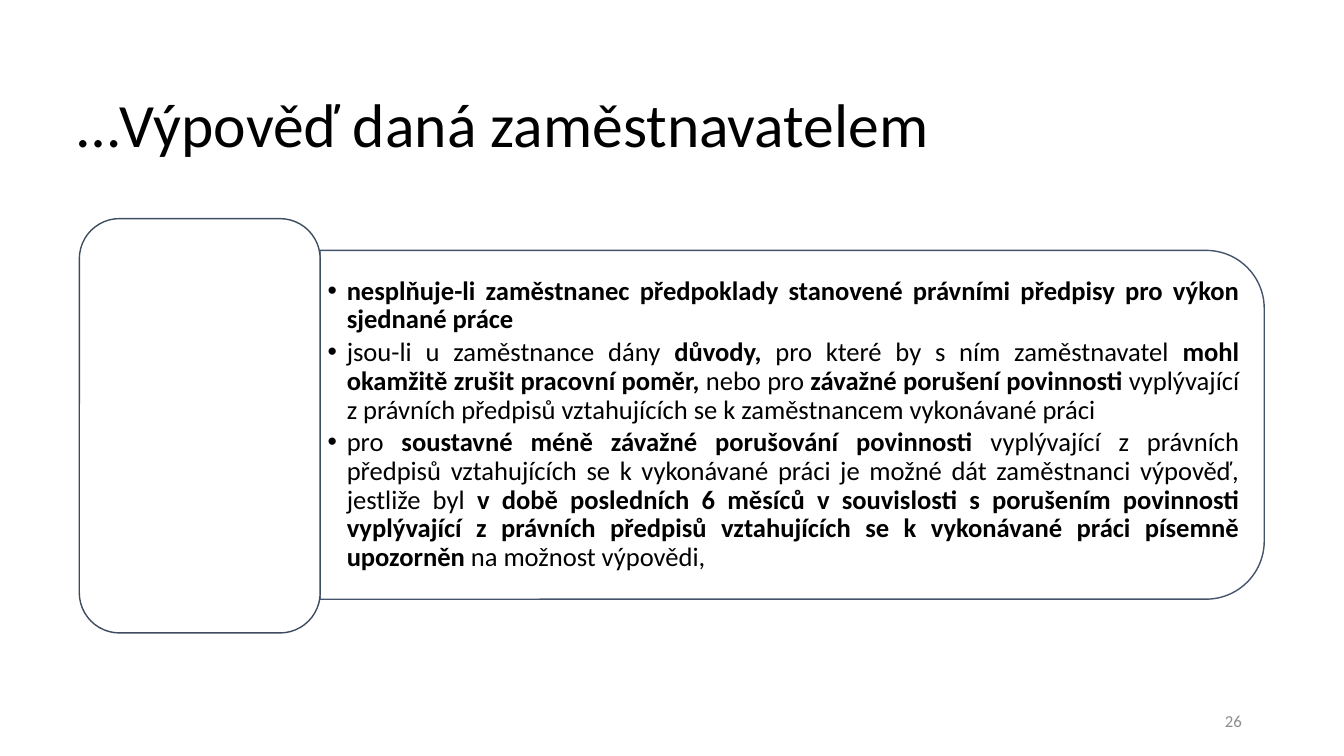
from dataclasses import dataclass

from lxml import etree
from pptx import Presentation
from pptx import util as u
from pptx.dml.color import RGBColor
from pptx.enum import shapes, text
from pptx.oxml.ns import qn


@dataclass(frozen=True)
class Theme:
    font: str = "Calibri"
    ink: str = "000000"
    muted: str = "8C8C8C"
    paper: str = "FFFFFF"
    panel_line: str = "44546A"
    tab_line: str = "3E4C60"
    title_size: int = 44
    body_size: int = 19
    number_size: int = 12


THEME = Theme()

# Each ground is a list of (wording, bold) runs
GROUNDS = [
    [("nesplňuje-li zaměstnanec předpoklady stanovené právními předpisy "
      "pro výkon sjednané práce", True)],
    [("jsou-li u zaměstnance dány ", False),
     ("důvody, ", True),
     ("pro které by s ním zaměstnavatel", False),
     (" mohl okamžitě zrušit pracovní poměr, ", True),
     ("nebo pro ", False),
     ("závažné porušení povinnosti ", True),
     ("vyplývající z právních předpisů vztahujících se k zaměstnancem "
      "vykonávané práci", False)],
    [("pro ", False),
     ("soustavné méně závažné porušování povinnosti ", True),
     ("vyplývající z právních předpisů vztahujících se k vykonávané práci "
      "je možné dát zaměstnanci výpověď, jestliže byl ", False),
     ("v době posledních 6 měsíců v souvislosti s porušením povinnosti "
      "vyplývající z právních předpisů vztahujících se k vykonávané práci "
      "písemně upozorněn ", True),
     ("na možnost výpovědi,", False)],
]


def cm_box(*lengths):
    return [u.Cm(length) for length in lengths]


def add_frame(slide, box, anchor):
    frame = slide.shapes.add_textbox(*box).text_frame
    frame.word_wrap = True
    frame.vertical_anchor = anchor
    return frame


def add_run(paragraph, wording, size, color, bold=False):
    run = paragraph.add_run()
    run.text = wording
    font = run.font
    font.name, font.size, font.bold = THEME.font, u.Pt(size), bold
    font.color.rgb = RGBColor.from_string(color)


def add_outlined(slide, preset, box, line_color):
    outlined = slide.shapes.add_shape(preset, *box)
    outlined.shadow.inherit = False
    outlined.fill.solid()
    outlined.fill.fore_color.rgb = RGBColor.from_string(THEME.paper)
    outlined.line.color.rgb = RGBColor.from_string(line_color)
    outlined.line.width = u.Pt(1)
    return outlined


def set_bullet(paragraph, indent):
    props = paragraph._p.get_or_add_pPr()
    props.set("marL", str(indent))
    props.set("indent", str(-indent))
    etree.SubElement(props, qn("a:buFont")).set("typeface", "Arial")
    etree.SubElement(props, qn("a:buChar")).set("char", "•")


def add_title(slide, box, wording):
    heading = add_frame(slide, box, text.MSO_ANCHOR.BOTTOM).paragraphs[0]
    heading.line_spacing = 0.9
    add_run(heading, wording, THEME.title_size, THEME.ink)


def add_grounds_panel(slide, box, grounds):
    left, top, width, height = box

    # Panel: a shape with two round corners, turned so they face right
    upright = (left + (width - height) // 2, top + (height - width) // 2,
               height, width)
    panel = add_outlined(slide, shapes.MSO_SHAPE.ROUND_2_SAME_RECTANGLE,
                         upright, THEME.panel_line)
    panel.rotation = 90
    paper = panel.fill._xPr.find(qn("a:solidFill"))[0]
    etree.SubElement(paper, qn("a:alpha")).set("val", "90000")

    # Bulleted grounds, clear of the round corners
    margin = u.Cm(0.43)
    frame = add_frame(slide, (left, top + margin, width - margin,
                              height - 2 * margin), text.MSO_ANCHOR.MIDDLE)
    frame.margin_left = frame.margin_right = u.Cm(0.2)
    frame.margin_top = frame.margin_bottom = u.Cm(0.1)
    for index, ground in enumerate(grounds):
        bullet = frame.add_paragraph() if index else frame.paragraphs[0]
        bullet.alignment = text.PP_ALIGN.JUSTIFY
        bullet.line_spacing = 0.9
        bullet.space_after = u.Pt(0.15 * THEME.body_size)
        set_bullet(bullet, u.Cm(0.48))
        for wording, bold in ground:
            add_run(bullet, wording, THEME.body_size, THEME.ink, bold)


def add_tab(slide, box):
    add_outlined(slide, shapes.MSO_SHAPE.ROUNDED_RECTANGLE, box,
                 THEME.tab_line)


def add_page_number(slide, box, number):
    page = add_frame(slide, box, text.MSO_ANCHOR.MIDDLE).paragraphs[0]
    page.alignment = text.PP_ALIGN.RIGHT
    add_run(page, number, THEME.number_size, THEME.muted)


def main():
    deck = Presentation()
    deck.slide_width, deck.slide_height = u.Cm(33.87), u.Cm(19.05)
    slide = deck.slides.add_slide(deck.slide_layouts[6])

    add_grounds_panel(slide, cm_box(8.06, 6.31, 23.8, 8.79), GROUNDS)
    add_tab(slide, cm_box(2, 5.51, 6.07, 10.44))
    add_title(slide, cm_box(1.7, 1, 30.48, 3.18),
              "…Výpověď daná zaměstnavatelem")
    add_page_number(slide, cm_box(23.93, 17.65, 7.62, 1.02), "26")

    deck.save("out.pptx")


if __name__ == "__main__":
    main()
